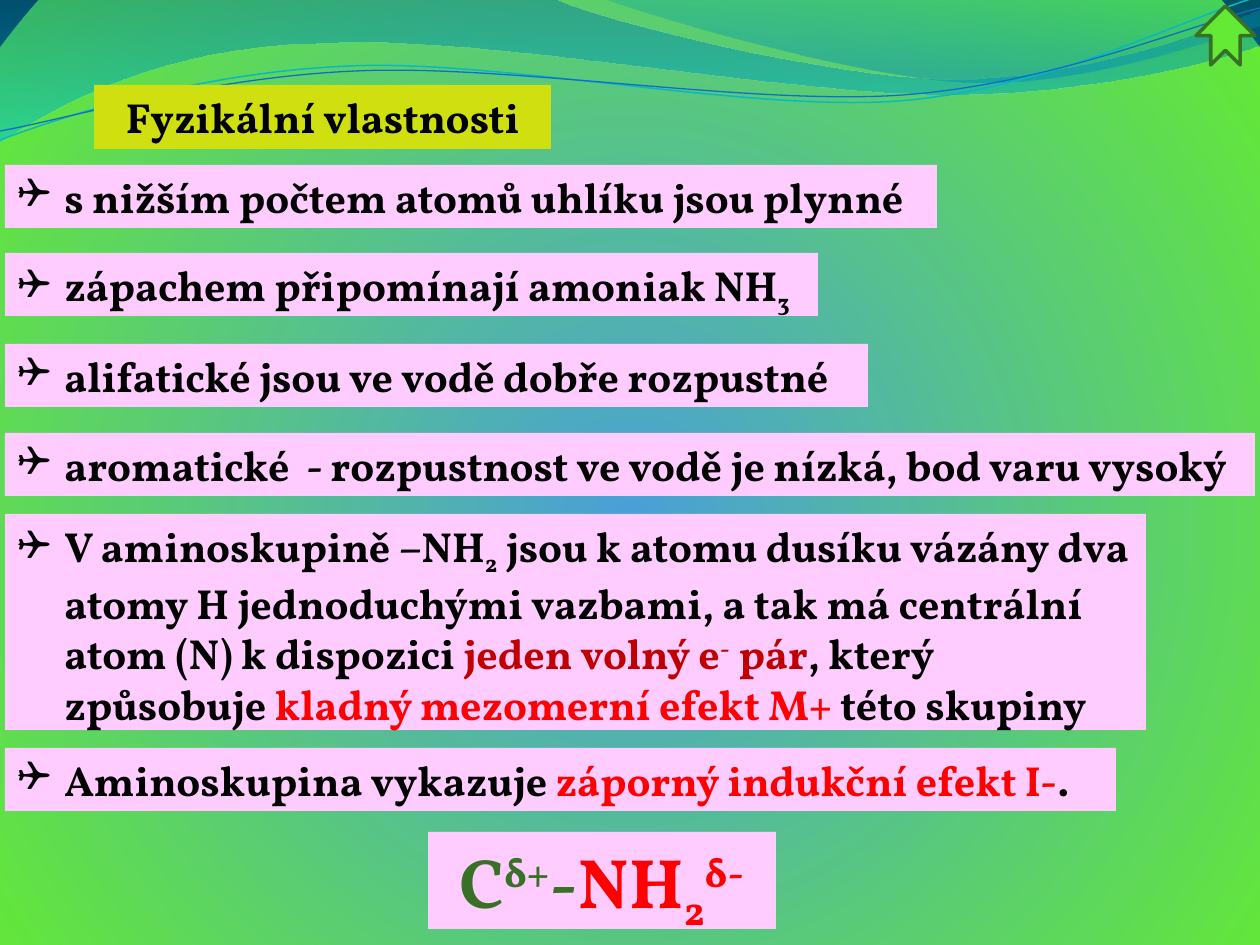
"""Builds a slide on the physical properties of amines."""
from lxml import etree
from pptx import Presentation
from pptx.dml.color import RGBColor
from pptx.enum.shapes import MSO_SHAPE
from pptx.enum.text import MSO_ANCHOR, PP_ALIGN
from pptx.oxml import parse_xml
from pptx.oxml.ns import nsdecls, qn
from pptx.util import Pt

PX = 914400 / 126
FONT = "Vollkorn"
BLACK = RGBColor(0x00, 0x00, 0x00)
RED = RGBColor(0xFF, 0x00, 0x00)
DARK_RED = RGBColor(0xC0, 0x00, 0x00)
GREEN = RGBColor(0x64, 0xE9, 0x35)
DARK_GREEN = RGBColor(0x38, 0x70, 0x26)
PINK = RGBColor(0xFF, 0xCC, 0xFF)
LIME = RGBColor(0xD0, 0xDF, 0x0F)
TEAL = RGBColor(0x0A, 0xB8, 0xBF)
BLUE = RGBColor(0x0F, 0x6F, 0xC6)
WAVE_BLUE = RGBColor(0x00, 0x74, 0xA1)
WAVE_CYAN = RGBColor(0x00, 0xC6, 0xCF)
WAVE_TEAL = RGBColor(0x00, 0xA1, 0xA9)
WAVE_AZURE = RGBColor(0x00, 0x8B, 0xBF)
CENTRE_BLUE = RGBColor(0x4A, 0x9F, 0xD8)
CORNER_NAVY = RGBColor(0x00, 0x32, 0x48)
CENTER = PP_ALIGN.CENTER
LEFT = PP_ALIGN.LEFT
TOP = MSO_ANCHOR.TOP
RECTANGLE = MSO_SHAPE.RECTANGLE
NOTCHED_ARROW = MSO_SHAPE.NOTCHED_RIGHT_ARROW
SUB, SUP = -25000, 30000
VERTICAL = '<a:lin ang="5400000" scaled="0"/>'
RADIAL = '<a:path path="circle"><a:fillToRect l="10000" t="110000" r="10000" b="100000"/></a:path>'


def gradient(stops, direction):
    items = "".join(
        f'<a:gs pos="{position * 1000}"><a:srgbClr val="{color}">'
        f'<a:alpha val="{alpha * 1000}"/></a:srgbClr></a:gs>'
        for position, color, alpha in stops
    )
    return parse_xml(f'<a:gradFill {nsdecls("a")} rotWithShape="1"><a:gsLst>{items}</a:gsLst>{direction}</a:gradFill>')


def add_text(runs, box, fill=PINK, size=24, align=LEFT, bullet=None):
    shape = slide.shapes.add_shape(RECTANGLE, *[round(value * PX) for value in box])
    shape.shadow.inherit = False
    shape.fill.solid()
    shape.fill.fore_color.rgb = fill
    shape.line.fill.background()
    frame = shape.text_frame
    frame.word_wrap = True
    frame.vertical_anchor = TOP
    paragraph = frame.paragraphs[0]
    paragraph.alignment = align
    if bullet:
        properties = paragraph._p.get_or_add_pPr()
        properties.set("marL", str(round(47 * PX)))
        properties.set("indent", str(round(-47 * PX)))
        properties.append(parse_xml(f'<a:buFont {nsdecls("a")} typeface="Wingdings"/>'))
        properties.append(parse_xml(f'<a:buChar {nsdecls("a")} char="{bullet}"/>'))
    for text, color, baseline in runs:
        run = paragraph.add_run()
        run.text = text
        run.font.name = FONT
        run.font.size = Pt(size)
        run.font.bold = True
        run.font.color.rgb = color
        if baseline:
            run.font._element.set("baseline", str(baseline))


presentation = Presentation()
presentation.slide_width = round(1260 * PX)
presentation.slide_height = round(945 * PX)
slide = presentation.slides.add_slide(presentation.slide_layouts[6])

slide.background.fill.solid()
background = slide._element.find(".//" + qn("p:bgPr"))
background.replace(
    background[0],
    gradient([(0, CENTRE_BLUE, 100), (100, GREEN, 100), (100, CORNER_NAVY, 100)], RADIAL),
)

wide_wave = [
    (0, 0), (554, -1), (600, 21, 837, 79, 955, 79), (1075, 79, 1207, 33, 1260, 11),
    (1261, 45), (1239, 55, 1096, 96, 940, 94), (784, 94, 481, 35, 324, 43),
    (163, 45, 58, 105, -1, 142),
]
right_wave = [(604, -1), (641, 14, 859, 78, 969, 82), (1079, 87, 1211, 40, 1260, 26), (1260, 0)]
teal_line = [
    (0, 140), (60, 117, 199, 72, 349, 66), (498, 59, 747, 112, 898, 101),
    (1050, 89, 1182, 19, 1257, -3),
]
blue_line = [
    (0, 131), (59, 121, 207, 77, 357, 71), (508, 64, 752, 106, 903, 95),
    (1053, 84, 1186, 26, 1260, 8),
]
curves = [
    (wide_wave, [(0, WAVE_BLUE, 45), (100, WAVE_CYAN, 55)], None, 0),
    (right_wave, [(0, WAVE_TEAL, 30), (80, WAVE_AZURE, 45)], None, 0),
    (teal_line, None, TEAL, 0.85),
    (blue_line, None, BLUE, 0.75),
]
for segments, stops, line_color, line_width in curves:
    points = [pair for segment in segments[1:] for pair in zip(segment[::2], segment[1::2])]
    builder = slide.shapes.build_freeform(*segments[0], scale=PX)
    builder.add_line_segments(points, close=stops is not None)
    shape = builder.convert_to_shape()
    straight_parts = iter(list(shape._element.iter(qn("a:lnTo"))))
    for segment in segments[1:]:
        first = next(straight_parts)
        if len(segment) == 6:
            curve = etree.Element(qn("a:cubicBezTo"))
            first.addprevious(curve)
            for part in (first, next(straight_parts), next(straight_parts)):
                curve.append(part[0])
                part.getparent().remove(part)
    shape.shadow.inherit = False
    shape.fill.background()
    if stops:
        shape.line.fill.background()
        properties = shape._element.spPr
        properties.replace(properties.find(qn("a:noFill")), gradient(stops, VERTICAL))
    else:
        shape.line.color.rgb = line_color
        shape.line.width = Pt(line_width)

add_text([("Fyzikální vlastnosti", BLACK, 0)], (94, 85, 457, 64), fill=LIME, align=CENTER)

facts = [
    (165, 932, 63, [("s nižším počtem atomů uhlíku jsou plynné", BLACK, 0)]),
    (253, 813, 63, [("zápachem připomínají amoniak NH", BLACK, 0), ("3", BLACK, SUB)]),
    (344, 863, 63, [("alifatické jsou ve vodě dobře rozpustné", BLACK, 0)]),
    (433, 1250, 63, [("aromatické  - rozpustnost ve vodě je nízká, bod varu vysoký", BLACK, 0)]),
    (514, 1141, 216, [
        ("V aminoskupině –NH", BLACK, 0),
        ("2", BLACK, SUB),
        (" jsou k atomu dusíku vázány dva atomy H jednoduchými vazbami, "
         "a tak má centrální atom (N) k dispozici ", BLACK, 0),
        ("jeden volný e", DARK_RED, 0),
        ("-", DARK_RED, SUP),
        (" pár", DARK_RED, 0),
        (", který způsobuje ", BLACK, 0),
        ("kladný mezomerní efekt M+", RED, 0),
        (" této skupiny", BLACK, 0),
    ]),
    (748, 1111, 63, [
        ("Aminoskupina vykazuje ", BLACK, 0),
        ("záporný indukční efekt I-", RED, 0),
        (".", BLACK, 0),
    ]),
]
for top, width, height, runs in facts:
    add_text(runs, (5, top, width, height), bullet="❑")

formula = [
    ("C", DARK_GREEN, 0), ("δ+", DARK_GREEN, SUP), ("-", DARK_GREEN, 0),
    ("NH", RED, 0), ("2", RED, SUB), ("δ-", RED, SUP),
]
add_text(formula, (428, 832, 348, 97), size=40, align=CENTER)

arrow = slide.shapes.add_shape(NOTCHED_ARROW, *[round(value * PX) for value in (1196, 6, 59, 59)])
arrow.rotation = 270
arrow.shadow.inherit = False
arrow.fill.solid()
arrow.fill.fore_color.rgb = GREEN
arrow.line.color.rgb = DARK_GREEN
arrow.line.width = Pt(2)

presentation.save("out.pptx")
